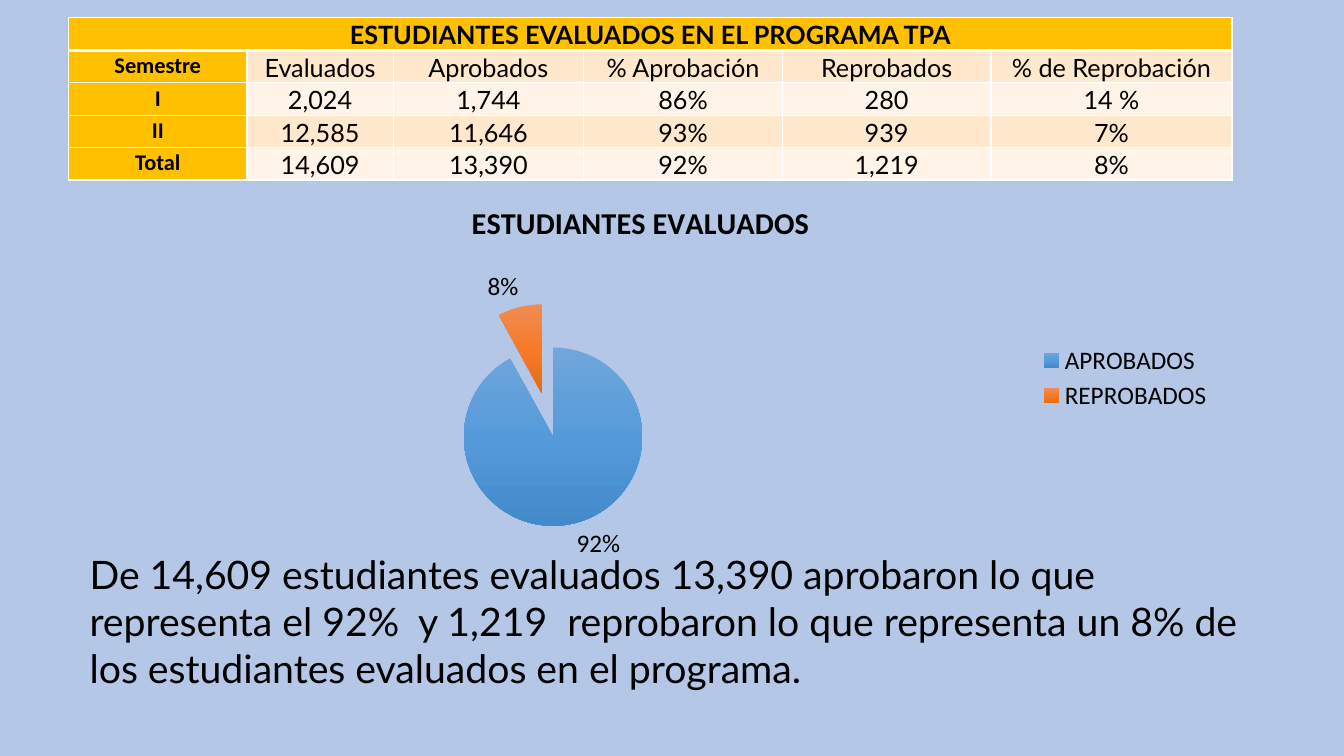
from copy import deepcopy
from typing import NamedTuple

from lxml import etree
from pptx import Presentation
from pptx.chart.data import CategoryChartData
from pptx.dml.color import RGBColor
from pptx.enum.chart import XL_CHART_TYPE as ChartType
from pptx.enum.chart import XL_LABEL_POSITION as LabelPos
from pptx.enum.chart import XL_LEGEND_POSITION as LegendPos
from pptx.enum.text import MSO_AUTO_SIZE as AutoSize
from pptx.enum.text import PP_ALIGN as Align
from pptx.oxml import parse_xml
from pptx.oxml.ns import nsdecls, qn
from pptx.util import Inches, Pt

BACKGROUND = RGBColor(0xB4, 0xC7, 0xE7)
BLACK = RGBColor(0x00, 0x00, 0x00)
AMBER = RGBColor(0xFF, 0xC0, 0x00)
BANDS = (RGBColor(0xFF, 0xF4, 0xE7), RGBColor(0xFF, 0xE8, 0xCC))

TABLE_TITLE = "ESTUDIANTES EVALUADOS EN EL PROGRAMA TPA"
CHART_TITLE = "ESTUDIANTES EVALUADOS"
SUMMARY = (
    "De 14,609 estudiantes evaluados 13,390 aprobaron lo que representa el 92%  "
    "y 1,219  reprobaron lo que representa un 8% de los estudiantes evaluados "
    "en el programa."
)
ROWS = (
    ("Semestre", "Evaluados", "Aprobados", "% Aprobación", "Reprobados", "% de Reprobación"),
    ("I", "2,024", "1,744", "86%", "280", "14 %"),
    ("II", "12,585", "11,646", "93%", "939", "7%"),
    ("Total", "14,609", "13,390", "92%", "1,219", "8%"),
)
COL_WIDTHS = (1.77, 1.45, 1.89, 1.97, 2.07, 2.39)
ROW_HEIGHTS = (0.33, 0.29, 0.29, 0.31, 0.29)
EXPLOSION = 25


class TextStyle(NamedTuple):
    font: str
    size: float
    bold: bool = False


class Slice(NamedTuple):
    label: str
    percent: int
    shades: tuple[RGBColor, RGBColor, RGBColor]


TITLE_STYLE = TextStyle("Lato", 18, True)
SEMESTER_STYLE = TextStyle("Calibri", 16, True)
FIGURE_STYLE = TextStyle("Lato", 18)
SUMMARY_STYLE = TextStyle("Lato", 28)
CHART_STYLE = TextStyle("Calibri", 18)
CHART_TITLE_STYLE = TextStyle("Calibri", 21.6, True)

SLICES = (
    Slice("APROBADOS", 92, (
        RGBColor(0x71, 0xA6, 0xDB), RGBColor(0x55, 0x9B, 0xDB), RGBColor(0x43, 0x8A, 0xC9))),
    Slice("REPROBADOS", 8, (
        RGBColor(0xF1, 0x8C, 0x55), RGBColor(0xF6, 0x7B, 0x28), RGBColor(0xE5, 0x6B, 0x17))),
)


def style_font(font, style: TextStyle) -> None:
    font.name = style.font
    font.size = Pt(style.size)
    font.bold = style.bold
    font.color.rgb = BLACK


def add_run(p, text: str, style: TextStyle) -> None:
    r = p.add_run()
    r.text = text
    style_font(r.font, style)


def set_borders(cell, bottom: float) -> None:
    tc_pr = cell._tc.get_or_add_tcPr()
    widths = {"lnL": 1, "lnR": 1, "lnT": 1, "lnB": bottom}
    for i, (side, width) in enumerate(widths.items()):
        tc_pr.insert(i, parse_xml(
            f'<a:{side} {nsdecls("a")} w="{Pt(width)}"><a:solidFill>'
            f'<a:srgbClr val="FFFFFF"/></a:solidFill></a:{side}>'))


def fill_cell(cell, text: str, style: TextStyle, color: RGBColor, bottom: float = 1) -> None:
    cell.fill.solid()
    cell.fill.fore_color.rgb = color
    cell.margin_left = cell.margin_right = Inches(0.1)
    cell.margin_top = cell.margin_bottom = 0
    set_borders(cell, bottom)
    p = cell.text_frame.paragraphs[0]
    p.alignment = Align.CENTER
    p.line_spacing = 1.07
    if text:
        add_run(p, text, style)


def add_results_table(s) -> None:
    table = s.shapes.add_table(
        len(ROW_HEIGHTS), len(COL_WIDTHS),
        Inches(0.68), Inches(0.17), Inches(11.55), Inches(1.62)).table
    for column, width in zip(table.columns, COL_WIDTHS):
        column.width = Inches(width)
    for row, height in zip(table.rows, ROW_HEIGHTS):
        row.height = Inches(height)
    table.cell(0, 0).merge(table.cell(0, len(COL_WIDTHS) - 1))
    for j in range(len(COL_WIDTHS)):
        fill_cell(table.cell(0, j), "" if j else TABLE_TITLE, TITLE_STYLE, AMBER, 3)
    for i, values in enumerate(ROWS, 1):
        for j, text in enumerate(values):
            style = FIGURE_STYLE if j else SEMESTER_STYLE
            fill_cell(table.cell(i, j), text, style, BANDS[i % 2] if j else AMBER)


def make_explosion():
    return parse_xml(f'<c:explosion {nsdecls("c")} val="{EXPLOSION}"/>')


def paint_slices(series) -> None:
    for i, piece in enumerate(SLICES):
        fill = series.points[i].format.fill
        fill.gradient()
        fill.gradient_angle = 270
        point = series._element.findall(qn("c:dPt"))[i]
        stops = next(point.iter(qn("a:gsLst")))
        stops.insert(1, deepcopy(stops[0]))
        for stop, position, shade in zip(fill.gradient_stops, (0, 0.5, 1), piece.shades):
            stop.position = position
            stop.color.rgb = shade
        point.find(qn("c:spPr")).addprevious(make_explosion())
    series._element.find(qn("c:dPt")).addprevious(make_explosion())


def place_plot(chart, x: float, y: float, w: float, h: float) -> None:
    plot_area = chart._chartSpace.chart.plotArea
    for old in plot_area.findall(qn("c:layout")):
        plot_area.remove(old)
    layout = etree.Element(qn("c:layout"))
    manual = etree.SubElement(layout, qn("c:manualLayout"))
    settings = {"layoutTarget": "inner", "xMode": "edge", "yMode": "edge",
                "x": x, "y": y, "w": w, "h": h}
    for tag, value in settings.items():
        etree.SubElement(manual, qn(f"c:{tag}")).set("val", str(value))
    plot_area.insert(0, layout)


def add_results_chart(s) -> None:
    data = CategoryChartData()
    data.categories = [piece.label for piece in SLICES]
    data.add_series(CHART_TITLE, [piece.percent for piece in SLICES])
    chart = s.shapes.add_chart(
        ChartType.PIE, Inches(0.58), Inches(1.81), Inches(11.55), Inches(3.88), data).chart
    style_font(chart.font, CHART_STYLE)
    chart.has_title = True
    add_run(chart.chart_title.text_frame.paragraphs[0], CHART_TITLE, CHART_TITLE_STYLE)
    chart.has_legend = True
    chart.legend.position = LegendPos.RIGHT
    chart.legend.include_in_layout = False
    style_font(chart.legend.font, CHART_STYLE)
    plot = chart.plots[0]
    plot.vary_by_categories = True
    paint_slices(plot.series[0])
    labels = plot.series[0].data_labels
    labels.show_percentage = True
    labels.show_value = False
    labels.number_format = "0%"
    labels.number_format_is_linked = False
    labels.position = LabelPos.OUTSIDE_END
    style_font(labels.font, CHART_STYLE)
    place_plot(chart, 0.08, 0.31, 0.68, 0.57)


def add_summary(s) -> None:
    sp = s.shapes.add_textbox(Inches(0.79), Inches(5.41), Inches(11.86), Inches(1.51))
    tf = sp.text_frame
    tf.word_wrap = True
    tf.auto_size = AutoSize.SHAPE_TO_FIT_TEXT
    add_run(tf.paragraphs[0], SUMMARY, SUMMARY_STYLE)


def main() -> None:
    prs = Presentation()
    prs.slide_width = Inches(13.33)
    prs.slide_height = Inches(7.5)
    s = prs.slides.add_slide(prs.slide_layouts[6])
    s.background.fill.solid()
    s.background.fill.fore_color.rgb = BACKGROUND
    add_summary(s)
    add_results_table(s)
    add_results_chart(s)
    prs.save("out.pptx")


if __name__ == "__main__":
    main()
